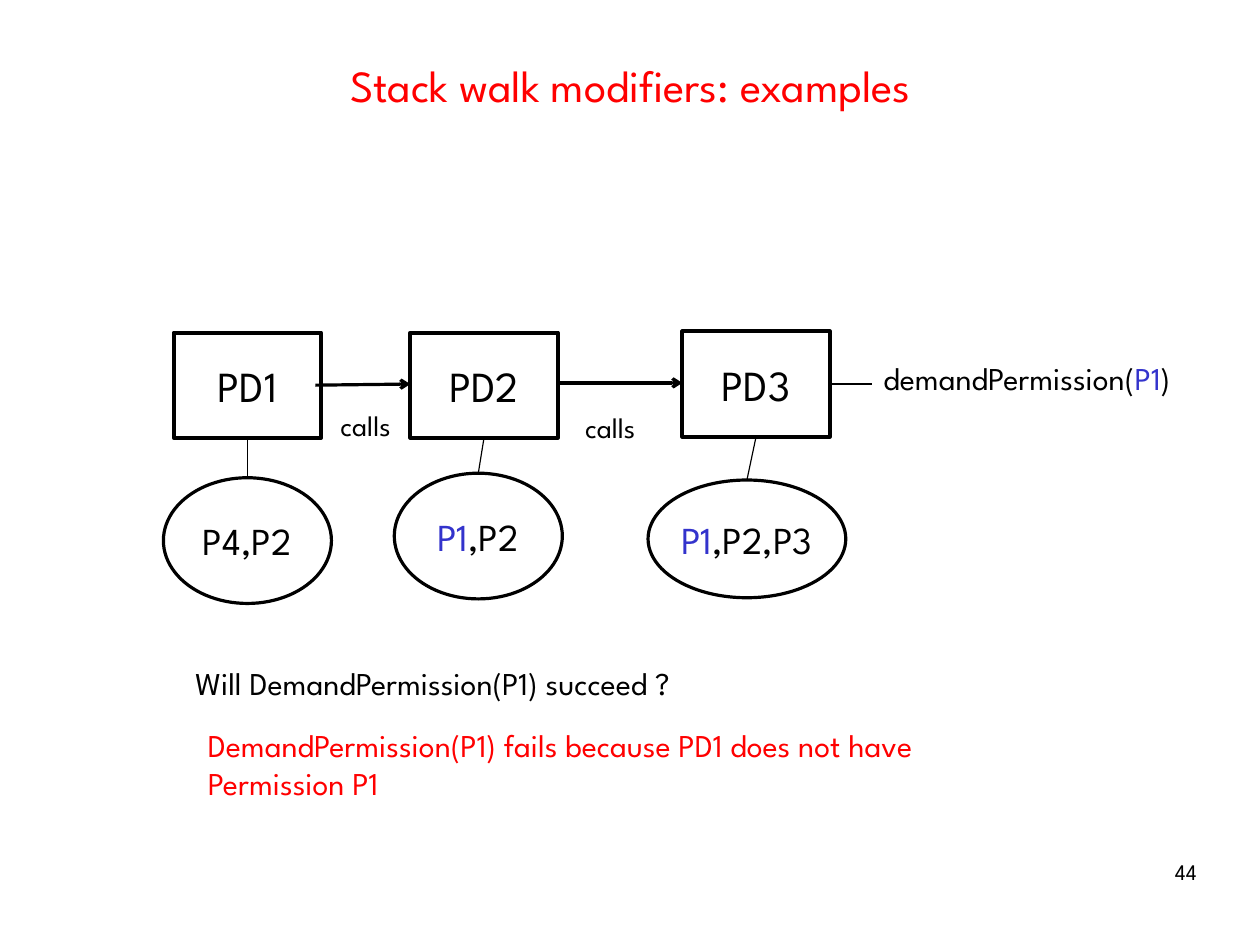
from dataclasses import dataclass

from lxml.etree import SubElement
from pptx import Presentation
from pptx.dml.color import RGBColor
from pptx.enum.shapes import MSO_CONNECTOR, MSO_SHAPE
from pptx.enum.text import MSO_ANCHOR, MSO_AUTO_SIZE, PP_ALIGN
from pptx.oxml.ns import qn
from pptx.slide import Slide
from pptx.text.text import TextFrame
from pptx.util import Cm, Inches, Pt


@dataclass(frozen=True)
class Theme:
    font: str = "League Spartan"
    ink: RGBColor = RGBColor(0x00, 0x00, 0x00)
    alert: RGBColor = RGBColor(0xFF, 0x00, 0x00)
    permission: RGBColor = RGBColor(0x33, 0x33, 0xCC)
    title_size: float = 28
    domain_size: float = 27
    permission_size: float = 24
    statement_size: float = 20
    call_size: float = 18
    number_size: float = 14
    domain_line: float = 2.5
    permission_line: float = 2
    call_line: float = 2
    link_line: float = 0.75


THEME = Theme()


@dataclass(frozen=True)
class Box:
    left: float
    top: float
    width: float
    height: float

    def inches(self) -> tuple[Inches, ...]:
        return tuple(Inches(v) for v in (self.left, self.top, self.width, self.height))

    @property
    def center(self) -> float:
        return self.left + self.width / 2

    @property
    def bottom(self) -> float:
        return self.top + self.height


@dataclass(frozen=True)
class Domain:
    """A protection domain and the permissions it holds."""
    name: str
    frame: Box
    permissions: str
    oval: Box


@dataclass(frozen=True)
class Label:
    text: str
    box: Box
    size: float = THEME.statement_size
    color: RGBColor = THEME.ink
    highlight: str = ""
    align: PP_ALIGN = PP_ALIGN.LEFT
    spacing: float = 1.0
    inset: bool = True


@dataclass(frozen=True)
class Line:
    start: tuple[float, float]
    end: tuple[float, float]
    width: float = THEME.link_line
    arrow: bool = False


DOMAINS = [
    Domain("PD1", Box(1.52, 2.91, 1.29, 0.92), "P4,P2", Box(1.43, 4.18, 1.47, 1.1)),
    Domain("PD2", Box(3.59, 2.91, 1.29, 0.92), "P1,P2", Box(3.45, 4.14, 1.47, 1.1)),
    Domain("PD3", Box(5.97, 2.9, 1.29, 0.92), "P1,P2,P3", Box(5.67, 4.2, 1.73, 1.03)),
]
LINES = [
    Line((7.26, 3.36), (7.63, 3.36)),
    Line((2.76, 3.37), (3.59, 3.36), THEME.call_line, arrow=True),
    Line((4.87, 3.35), (5.97, 3.35), THEME.call_line, arrow=True),
]
LABELS = [
    Label("demandPermission(P1)", Box(7.63, 3.09, 3.35, 0.44), highlight="P1"),
    Label("calls", Box(2.88, 3.47, 0.93, 0.52), THEME.call_size, spacing=1.16),
    Label("calls", Box(5.02, 3.49, 0.93, 0.52), THEME.call_size, spacing=1.16),
    Label("Will DemandPermission(P1) succeed ?", Box(1.61, 5.76, 5.42, 0.44)),
    Label("DemandPermission(P1) fails because PD1 does not have\nPermission P1",
          Box(1.72, 6.3, 7.85, 0.78), color=THEME.alert),
    Label("44", Box(7.9, 7.53, 2.57, 0.57), THEME.number_size,
          align=PP_ALIGN.RIGHT, spacing=0.93, inset=False),
]


def write_text(frame: TextFrame, text: str, *, size: float,
               color: RGBColor = THEME.ink, highlight: str = "",
               align: PP_ALIGN = PP_ALIGN.CENTER, spacing: float = 1.0,
               anchor: MSO_ANCHOR = MSO_ANCHOR.MIDDLE, wrap: bool = True) -> None:
    """Fill the frame, one paragraph a line, with the highlighted term in its own colour."""
    frame.auto_size = MSO_AUTO_SIZE.NONE
    frame.word_wrap = wrap
    frame.vertical_anchor = anchor
    for index, line in enumerate(text.split("\n")):
        paragraph = frame.add_paragraph() if index else frame.paragraphs[0]
        paragraph.alignment = align
        paragraph.line_spacing = spacing
        parts = line.partition(highlight) if highlight else (line,)
        for part in filter(None, parts):
            run = paragraph.add_run()
            run.text = part
            run.font.name = THEME.font
            run.font.size = Pt(size)
            run.font.color.rgb = THEME.permission if part == highlight else color


def add_title(slide: Slide, text: str, box: Box) -> None:
    title = slide.shapes.title
    title.left, title.top, title.width, title.height = box.inches()
    write_text(title.text_frame, text, size=THEME.title_size, color=THEME.alert)


def add_outline(slide: Slide, kind: MSO_SHAPE, box: Box, text: str,
                size: float, line_width: float, highlight: str = "") -> None:
    outline = slide.shapes.add_shape(kind, *box.inches())
    outline.shadow.inherit = False
    outline.fill.background()
    outline.line.color.rgb = THEME.ink
    outline.line.width = Pt(line_width)
    write_text(outline.text_frame, text, size=size, highlight=highlight, wrap=False)


def add_line(slide: Slide, line: Line) -> None:
    points = (Inches(v) for v in (*line.start, *line.end))
    connector = slide.shapes.add_connector(MSO_CONNECTOR.STRAIGHT, *points)
    connector.line.color.rgb = THEME.ink
    connector.line.width = Pt(line.width)
    if line.arrow:
        SubElement(connector.line._get_or_add_ln(), qn("a:tailEnd"), type="arrow")
    SubElement(connector._element.spPr, qn("a:effectLst"))


def add_domain(slide: Slide, domain: Domain) -> None:
    add_outline(slide, MSO_SHAPE.RECTANGLE, domain.frame, domain.name,
                THEME.domain_size, THEME.domain_line)
    add_outline(slide, MSO_SHAPE.OVAL, domain.oval, domain.permissions,
                THEME.permission_size, THEME.permission_line, highlight="P1")
    add_line(slide, Line((domain.oval.center, domain.oval.top),
                         (domain.frame.center, domain.frame.bottom)))


def add_label(slide: Slide, label: Label) -> None:
    frame = slide.shapes.add_textbox(*label.box.inches()).text_frame
    if not label.inset:
        frame.margin_left = frame.margin_right = Inches(0)
        frame.margin_top = frame.margin_bottom = Inches(0)
    write_text(frame, label.text, size=label.size, color=label.color,
               highlight=label.highlight, align=label.align,
               spacing=label.spacing, anchor=MSO_ANCHOR.TOP)


def main() -> None:
    presentation = Presentation()
    presentation.slide_width = Cm(28)
    presentation.slide_height = Cm(21)
    title_only = presentation.slide_layouts[5]
    slide = presentation.slides.add_slide(title_only)

    add_title(slide, "Stack walk modifiers: examples", Box(0.87, 0.34, 9.29, 0.81))
    for domain in DOMAINS:
        add_domain(slide, domain)
    for line in LINES:
        add_line(slide, line)
    for label in LABELS:
        add_label(slide, label)
    presentation.save("out.pptx")


if __name__ == "__main__":
    main()
